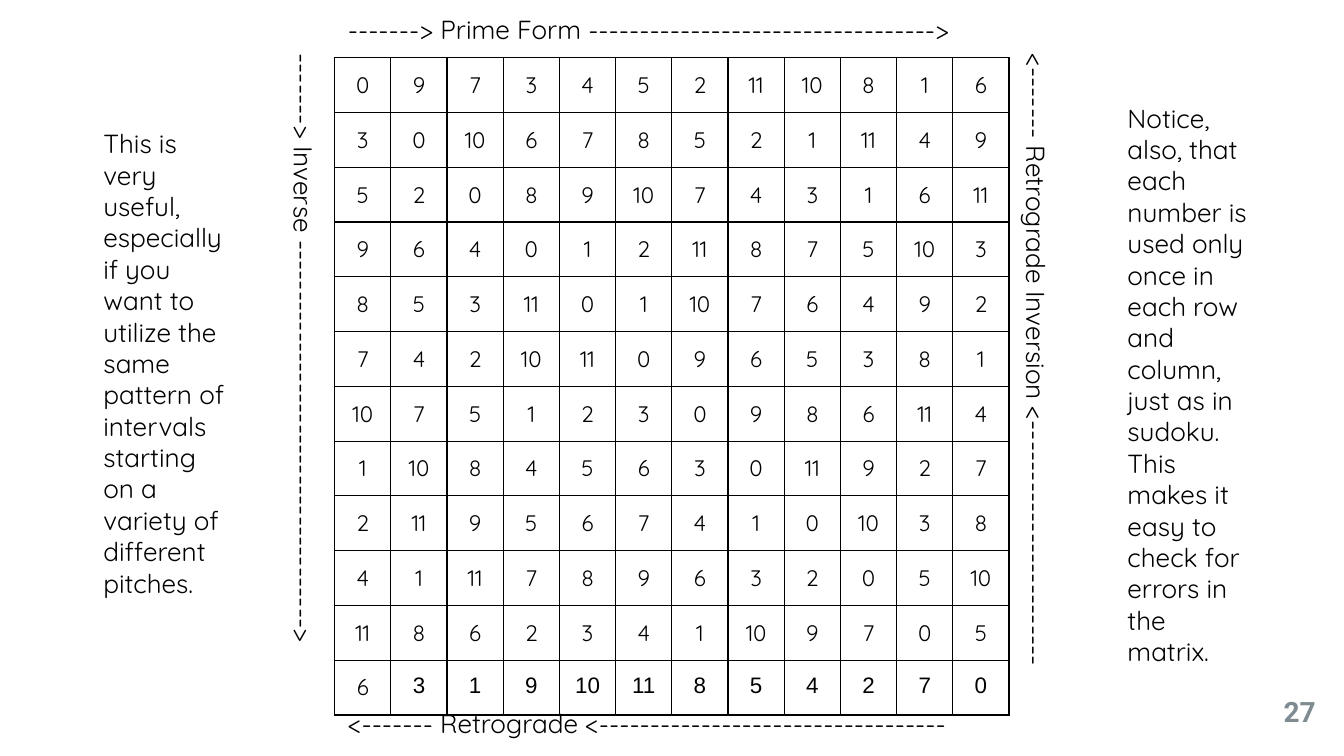
from lxml import etree
from pptx import Presentation
from pptx.dml.color import RGBColor
from pptx.enum.text import MSO_ANCHOR, PP_ALIGN
from pptx.oxml.ns import qn
from pptx.util import Inches, Pt

LEFT, CENTER, RIGHT = PP_ALIGN.LEFT, PP_ALIGN.CENTER, PP_ALIGN.RIGHT
TOP, MIDDLE = MSO_ANCHOR.TOP, MSO_ANCHOR.MIDDLE
BLACK, GRAY = "000000", "7F8B91"

# Content: each matrix row is the prime row transposed to start on another pitch
PRIME_ROW = [0, 9, 7, 3, 4, 5, 2, 11, 10, 8, 1, 6]
MATRIX = [[(pitch - start) % 12 for pitch in PRIME_ROW] for start in PRIME_ROW]

# Text, left, top, rotation
DIRECTIONS = [
    ("-------> Prime Form ---------------------------------->", 2.49, 0, 0),
    ("-------> Inverse -------------------------------------->", -0.17, 2.67, 90),
    ("<------- Retrograde <----------------------------------", 2.49, 5.16, 0),
    ("<------- Retrograde Inversion <------------------------", 5.28, 2.67, 90),
]
# Text, left, top, height
NOTES = [
    ("This is very useful, especially if you want to utilize the same pattern "
     "of intervals starting on a variety of different pitches.", 0.67, 0.85, 3.92),
    ("Notice, also, that each number is used only once in each row and column, "
     "just as in sudoku. This makes it easy to check for errors in the matrix.",
     8.29, 0.66, 4.3),
]
PAGE_NUMBER = "27"

SLIDE_WIDTH = Inches(10)
SLIDE_HEIGHT = SLIDE_WIDTH * 9 // 16
MATRIX_LEFT, MATRIX_TOP = 2.49, 0.43
MATRIX_WIDTH, MATRIX_HEIGHT = 5.02, 4.89
DIRECTION_HEIGHT = 0.28
NOTE_WIDTH = 1.12
INSET = 0.1


def rgb(color):
    return RGBColor.from_string(color)


def style(paragraph, size, font="Quicksand", color=BLACK, bold=False, align=LEFT):
    paragraph.alignment = align
    paragraph.font.size = Pt(size)
    paragraph.font.name = font
    paragraph.font.bold = bold
    paragraph.font.color.rgb = rgb(color)


def set_margins(target, inset):
    target.margin_left = target.margin_right = Inches(inset)
    target.margin_top = target.margin_bottom = Inches(inset)


def add_text(slide, text, left, top, width, height, size=14, inset=INSET,
             anchor=TOP, rotation=0, **look):
    box = slide.shapes.add_textbox(*map(Inches, (left, top, width, height)))
    box.rotation = rotation
    frame = box.text_frame
    frame.word_wrap = True
    frame.vertical_anchor = anchor
    set_margins(frame, inset)
    frame.text = text
    style(frame.paragraphs[0], size, **look)


def add_borders(cell, color=BLACK, width=0.75):
    properties = cell._tc.get_or_add_tcPr()
    for side in ("a:lnL", "a:lnR", "a:lnT", "a:lnB"):
        line = etree.SubElement(properties, qn(side), w=str(Pt(width)))
        fill = etree.SubElement(line, qn("a:solidFill"))
        etree.SubElement(fill, qn("a:srgbClr"), val=color)


def add_matrix(slide):
    count = len(PRIME_ROW)
    table = slide.shapes.add_table(
        count, count, Inches(MATRIX_LEFT), Inches(MATRIX_TOP),
        Inches(MATRIX_WIDTH), Inches(MATRIX_HEIGHT)).table
    table.first_row = table.horz_banding = False
    for r, row in enumerate(MATRIX):
        for c, pitch in enumerate(row):
            cell = table.cell(r, c)
            cell.text = str(pitch)
            set_margins(cell, INSET)
            add_borders(cell)
            cell.fill.background()
            # The last row is in Arial after its first number
            font = "Arial" if r == count - 1 and c > 0 else "Quicksand"
            style(cell.text_frame.paragraphs[0], 12, font, align=CENTER)


def main():
    prs = Presentation()
    prs.slide_width, prs.slide_height = SLIDE_WIDTH, SLIDE_HEIGHT
    slide = prs.slides.add_slide(prs.slide_layouts[6])

    # Page number
    add_text(slide, PAGE_NUMBER, 9.19, 5.13, 0.6, 0.33, size=15, inset=0,
             anchor=MIDDLE, font="Roboto", color=GRAY, bold=True, align=RIGHT)

    # Twelve-tone matrix
    add_matrix(slide)

    # Reading directions around the matrix
    for text, left, top, rotation in DIRECTIONS:
        add_text(slide, text, left, top, MATRIX_WIDTH, DIRECTION_HEIGHT,
                 rotation=rotation)

    # Notes on either side
    for text, left, top, height in NOTES:
        add_text(slide, text, left, top, NOTE_WIDTH, height)

    prs.save("out.pptx")


if __name__ == "__main__":
    main()
